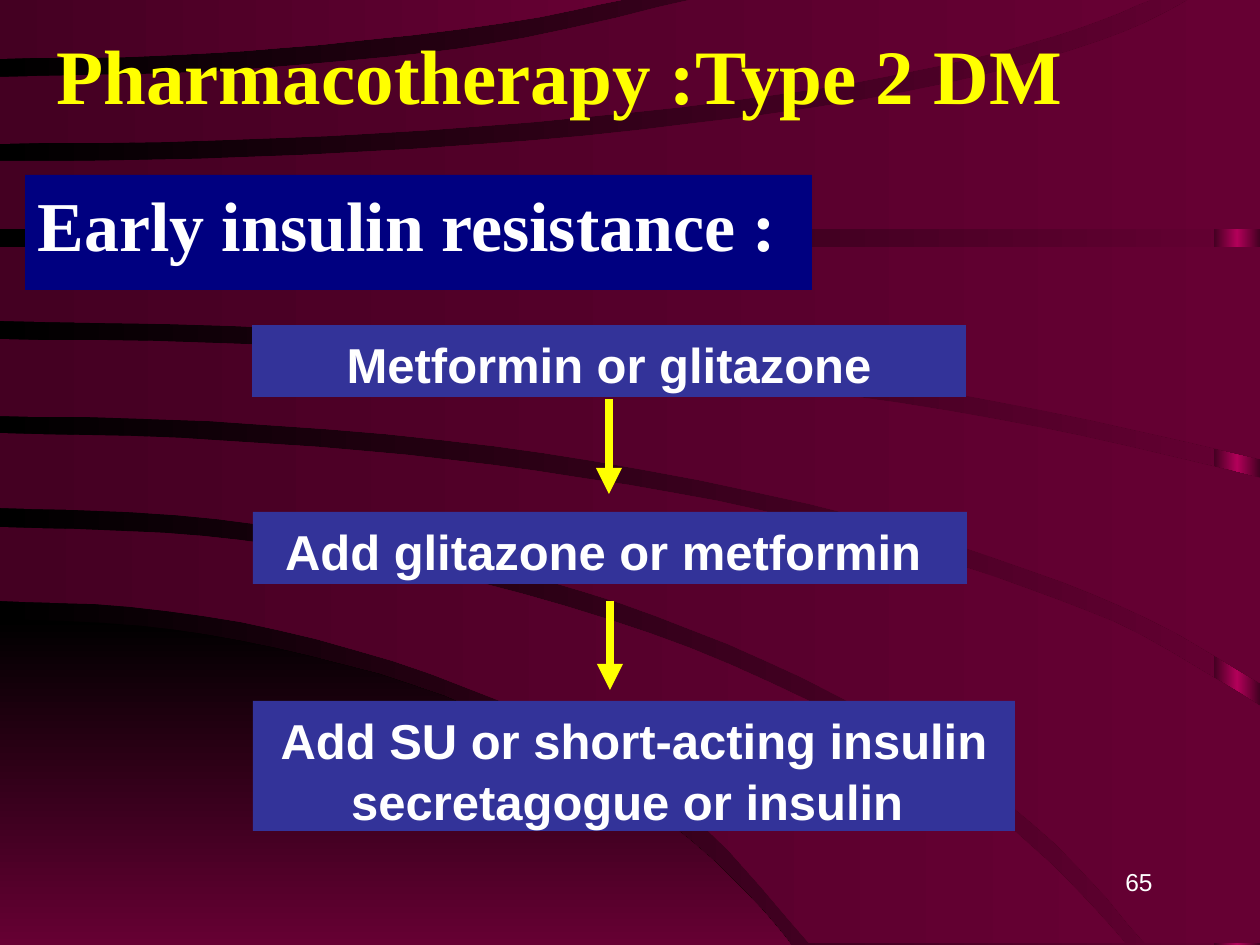
from copy import deepcopy
from dataclasses import dataclass
from pptx import Presentation
from pptx.dml.color import RGBColor
from pptx.enum.shapes import MSO_CONNECTOR, MSO_SHAPE
from pptx.enum.text import MSO_ANCHOR, PP_ALIGN
from pptx.oxml.ns import qn
from pptx.oxml.xmlchemy import OxmlElement
from pptx.util import Pt

SCALE = 914400 / 126  # EMU per px
WIDTH, HEIGHT = 1260, 945


@dataclass(frozen=True)
class Theme:
    serif: str = "Times New Roman"
    sans: str = "Arial"
    black: str = "000000"
    wine: str = "660033"
    dark: str = "440022"
    pink: str = "B20059"
    navy: str = "000080"
    blue: str = "333399"
    yellow: str = "FFFF00"
    white: str = "FFFFFF"
    title: int = 44
    head: int = 40
    step: int = 28
    page: int = 14
    line: int = 5


THEME = Theme()

# Curved bands: upper edge, lower edge, corners between their right ends
BANDS = [
    ([(0, 527), (164, 533), (314, 551), (481, 583), (649, 633), (811, 702),
      (965, 794), (1050, 863), (1125, 943)],
     [(0, 601), (132, 607), (278, 630), (431, 674), (572, 736), (697, 820),
      (809, 943)], []),
    ([(0, 433), (181, 438), (364, 451), (537, 471), (718, 501), (873, 539),
      (1031, 590), (1139, 634), (1260, 706)],
     [(0, 508), (176, 515), (336, 536), (510, 571), (656, 616), (801, 677),
      (953, 764), (1056, 844), (1145, 943)], [(1260, 943)]),
    ([(0, 339), (212, 343), (440, 354), (659, 373), (900, 403), (1082, 436),
      (1260, 478)],
     [(0, 416), (210, 421), (442, 440), (645, 470), (861, 517), (1029, 570),
      (1149, 619), (1260, 683)], []),
    ([(0, 247), (1260, 247)],
     [(0, 321), (234, 326), (490, 339), (696, 358), (885, 382), (1090, 420),
      (1260, 459)], []),
    ([(0, 161), (198, 159), (415, 149), (640, 130), (862, 100), (1012, 68),
      (1124, 32), (1188, 0)],
     [(0, 229), (1260, 229)], [(1260, 0)]),
    ([(0, 77), (202, 72), (388, 57), (524, 38), (690, 0)],
     [(0, 144), (223, 140), (430, 130), (635, 112), (816, 89), (973, 58),
      (1076, 29), (1150, 0)], []),
    ([(0, 0), (621, 0)],
     [(0, 59), (173, 55), (319, 45), (503, 23), (621, 0)], []),
]
WEDGE = ([(0, 619), (141, 626), (275, 648), (412, 685), (536, 738),
          (665, 820), (751, 898), (791, 945)], [(0, 945)], [])

# Treatment steps: left, top, width, height, text
STEPS = [
    (252, 325, 714, 72, "Metformin or glitazone"),
    (253, 512, 714, 72, "Add glitazone or metformin "),
    (253, 701, 762, 130,
     "Add SU or short-acting insulin secretagogue or insulin "),
]
ARROWS = [(609, 399, 494), (610, 601, 690)]  # x, top, bottom


def px(*vals):
    return [round(v * SCALE) for v in vals]


def rgb(code):
    return RGBColor.from_string(code)


def blend(fill, root, codes, angle=0):
    """Spread the colours evenly along a linear gradient."""
    fill.gradient()
    fill.gradient_angle = angle
    stops = root.find(".//" + qn("a:gsLst"))
    for _ in codes[2:]:
        stops.append(deepcopy(stops[-1]))
    for i, (stop, code) in enumerate(zip(fill.gradient_stops, codes)):
        stop.color.rgb = rgb(code)
        stop.position = i / (len(codes) - 1)


def plain(shape):
    shape.shadow.inherit = False
    shape.line.fill.background()
    return shape


def smooth(pts, parts=4):
    """Run a Catmull-Rom curve through the points."""
    ends = [pts[0], *pts, pts[-1]]
    out = [pts[0]]
    for a, b, c, d in zip(ends, ends[1:], ends[2:], ends[3:]):
        for k in range(1, parts + 1):
            t = k / parts
            out.append(tuple(
                (2 * q + (r - p) * t + (2 * p - 5 * q + 4 * r - s) * t ** 2
                 + (3 * q - p - 3 * r + s) * t ** 3) / 2
                for p, q, r, s in zip(a, b, c, d)))
    return out


def band(slide, edges, codes, angle=0):
    upper, lower, corners = edges
    pts = smooth(upper) + corners + smooth(lower)[::-1]
    path = slide.shapes.build_freeform(*pts[0], scale=SCALE)
    path.add_line_segments(pts[1:], close=True)
    shape = plain(path.convert_to_shape())
    blend(shape.fill, shape._element, codes, angle)


def rect(slide, *box):
    return plain(slide.shapes.add_shape(MSO_SHAPE.RECTANGLE, *px(*box)))


def write(shape, text, size, color, font, align=PP_ALIGN.LEFT,
          anchor=MSO_ANCHOR.TOP, bold=True, before=0, pitch=1.0):
    frame = shape.text_frame
    frame.word_wrap = True
    frame.vertical_anchor = anchor
    para = frame.paragraphs[0]
    para.text = text
    para.alignment = align
    para.space_before = Pt(before)
    para.line_spacing = pitch
    para.font.name = font
    para.font.size = Pt(size)
    para.font.bold = bold
    para.font.color.rgb = rgb(color)


def label(slide, box, *args, **opts):
    write(slide.shapes.add_textbox(*px(*box)), *args, **opts)


def panel(slide, box, fill, *args, **opts):
    shape = rect(slide, *box)
    shape.fill.solid()
    shape.fill.fore_color.rgb = rgb(fill)
    write(shape, *args, **opts)


def arrow(slide, x, top, bottom):
    link = slide.shapes.add_connector(
        MSO_CONNECTOR.STRAIGHT, *px(x, top, x, bottom))
    link.line.color.rgb = rgb(THEME.yellow)
    link.line.width = Pt(THEME.line)
    tip = OxmlElement("a:tailEnd")
    tip.set("type", "triangle")
    link.line._get_or_add_ln().append(tip)
    link._element.spPr.append(OxmlElement("a:effectLst"))


def backdrop(slide):
    blend(slide.background.fill, slide._element, [THEME.black, THEME.wine])
    strip = rect(slide, 1214, 0, 46, HEIGHT)
    blend(strip.fill, strip._element, [THEME.dark, THEME.pink, THEME.dark])
    band(slide, WEDGE, [THEME.black, THEME.wine], angle=270)
    for edges in BANDS:
        band(slide, edges, [THEME.dark, THEME.wine])


def main():
    deck = Presentation()
    deck.slide_width, deck.slide_height = px(WIDTH, HEIGHT)
    slide = deck.slides.add_slide(deck.slide_layouts[6])
    backdrop(slide)

    # Page number, title and heading
    label(slide, (903, 861, 262, 63), "65", THEME.page, THEME.white,
          THEME.sans, align=PP_ALIGN.RIGHT, bold=False)
    label(slide, (44, 0, 1176, 147), "Pharmacotherapy :Type 2 DM",
          THEME.title, THEME.yellow, THEME.serif, anchor=MSO_ANCHOR.MIDDLE)
    panel(slide, (25, 175, 787, 115), THEME.navy, "Early insulin resistance :",
          THEME.head, THEME.white, THEME.serif, before=5)

    # Treatment steps
    for *box, text in STEPS:
        panel(slide, box, THEME.blue, text, THEME.step, THEME.white,
              THEME.sans, align=PP_ALIGN.CENTER, before=1, pitch=1.05)
    for spot in ARROWS:
        arrow(slide, *spot)
    deck.save("out.pptx")


if __name__ == "__main__":
    main()
